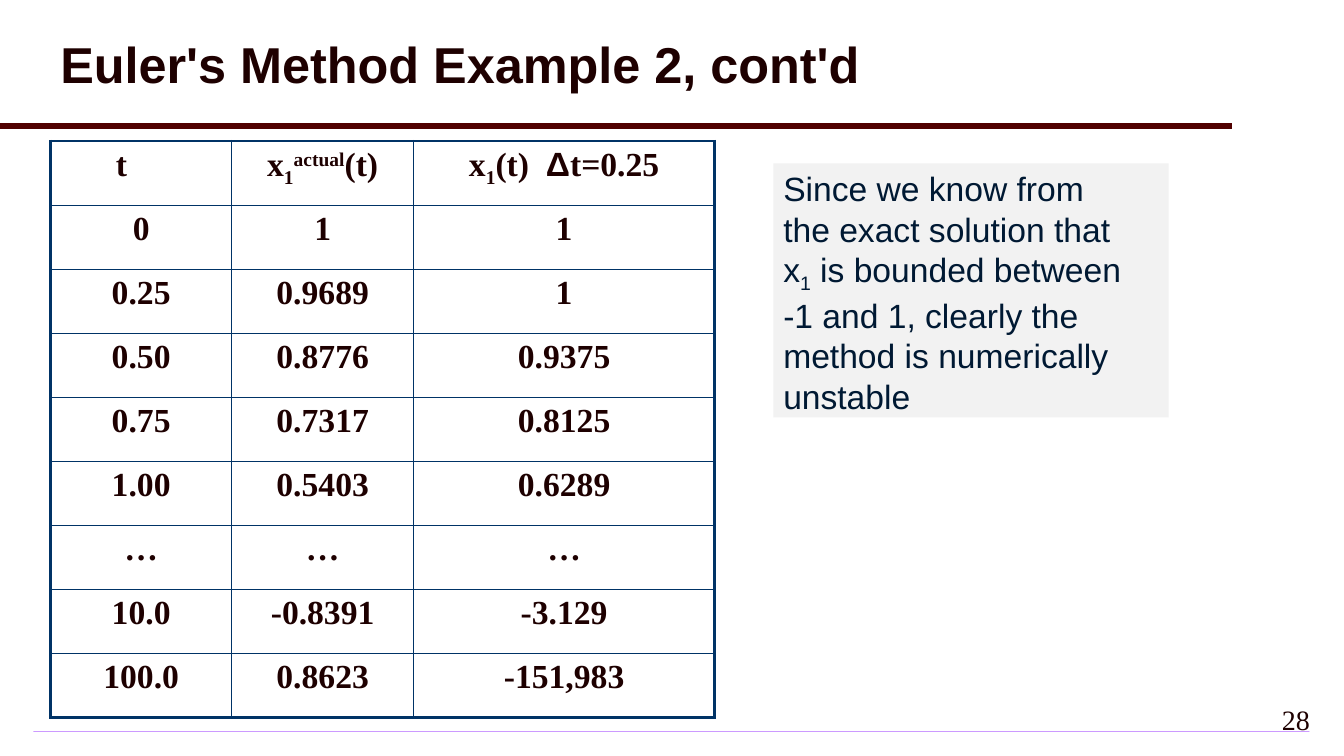
import dataclasses
import typing

import lxml.etree
import pptx
import pptx.dml.color
import pptx.enum.shapes
import pptx.enum.text
import pptx.oxml.ns
import pptx.util

Inches = pptx.util.Inches
Align = pptx.enum.text.PP_ALIGN
Anchor = pptx.enum.text.MSO_ANCHOR
Rect = pptx.enum.shapes.MSO_SHAPE.RECTANGLE
qn = pptx.oxml.ns.qn

SANS, SERIF = "Arial", "Times New Roman"
DARK, NAVY, INK = "1E0000", "003366", "001933"
THICK, THIN = 2.25, 1


@dataclasses.dataclass(frozen=True)
class Bit:
    text: str
    base: int = 0
    face: str = ""


@dataclasses.dataclass(frozen=True)
class Box:
    left: float
    top: float
    width: float
    height: float

    def area(self) -> tuple:
        return tuple(Inches(n) for n in dataclasses.astuple(self))


Text = typing.Union[str, list[Bit]]

HEAD: list[Text] = [
    "t\t",
    [Bit("x"), Bit("1", -25), Bit("actual", 30), Bit("(t)")],
    [Bit("x"), Bit("1", -25), Bit("(t)  "), Bit("Δ", face=SANS), Bit("t=0.25")],
]
ROWS: list[list[Text]] = [
    HEAD,
    ["0", "1", "1"],
    ["0.25", "0.9689", "1"],
    ["0.50", "0.8776", "0.9375"],
    ["0.75", "0.7317", "0.8125"],
    ["1.00", "0.5403", "0.6289"],
    ["…", "…", "…"],
    ["10.0", "-0.8391", "-3.129"],
    ["100.0", "0.8623", "-151,983"],
]
WIDTHS = [1.8, 1.8, 2.99]
GRID = Box(0.5, 1.4, sum(WIDTHS), 5.72)
NOTE = [
    Bit("Since we know from\nthe exact solution that\nx"),
    Bit("1", -25),
    Bit(" is bounded between\n-1 and 1, clearly the\nmethod is numerically\nunstable"),
]


def color(code: str) -> pptx.dml.color.RGBColor:
    return pptx.dml.color.RGBColor.from_string(code)


def write(frame, text: Text, *, size: float, face: str, ink: str = DARK,
          bold: bool = False, align=Align.LEFT, lead: float = 1.0) -> None:
    frame.word_wrap = True
    para = frame.paragraphs[0]
    para.alignment = align
    para.line_spacing = lead
    for bit in [Bit(text)] if isinstance(text, str) else text:
        for i, line in enumerate(bit.text.split("\n")):
            if i:
                para.add_line_break()
            run = para.add_run()
            run.text = line
            run.font.size = pptx.util.Pt(size)
            run.font.name = bit.face or face
            run.font.bold = bold
            run.font.color.rgb = color(ink)
            if bit.base:
                run._r.get_or_add_rPr().set("baseline", str(bit.base * 1000))


def label(slide, box: Box, text: Text, anchor=Anchor.TOP, **form) -> None:
    frame = slide.shapes.add_textbox(*box.area()).text_frame
    frame.vertical_anchor = anchor
    write(frame, text, **form)


def panel(slide, box: Box):
    shape = slide.shapes.add_shape(Rect, *box.area())
    shape.shadow.inherit = False
    shape.line.fill.background()
    return shape


def footer(slide) -> None:
    shape = panel(slide, Box(0.33, 7.25, 12.66, 0.01))
    shape.fill.gradient()
    for stop, code in zip(shape.fill.gradient_stops, ["CC99FF", "F3EBFF"]):
        stop.color.rgb = color(code)
    lin = shape._element.spPr.find(".//" + qn("a:lin"))
    glow = lxml.etree.Element(qn("a:path"), {"path": "shape"})
    mid = {side: "50000" for side in "ltrb"}
    lxml.etree.SubElement(glow, qn("a:fillToRect"), mid)
    lin.getparent().replace(lin, glow)


def rule(slide) -> None:
    line = slide.shapes.add_connector(
        pptx.enum.shapes.MSO_CONNECTOR.STRAIGHT,
        Inches(0), Inches(1.25), Inches(12.22), Inches(1.25))
    line.line.color.rgb = color("500000")
    line.line.width = pptx.util.Pt(4)
    lxml.etree.SubElement(line._element.spPr, qn("a:effectLst"))


def border(cell, edges: dict[str, bool]) -> None:
    props = cell._tc.get_or_add_tcPr()
    for side, outer in edges.items():
        width = pptx.util.Pt(THICK if outer else THIN)
        edge = lxml.etree.SubElement(props, qn("a:ln" + side), {"w": str(width)})
        fill = lxml.etree.SubElement(edge, qn("a:solidFill"))
        lxml.etree.SubElement(fill, qn("a:srgbClr"), {"val": NAVY})


def table(slide) -> None:
    grid = slide.shapes.add_table(len(ROWS), len(WIDTHS), *GRID.area()).table
    grid.first_row = grid.horz_banding = False
    for col, width in zip(grid.columns, WIDTHS):
        col.width = Inches(width)
    for r, row in enumerate(ROWS):
        grid.rows[r].height = Inches(GRID.height / len(ROWS))
        for c, text in enumerate(row):
            cell = grid.cell(r, c)
            border(cell, {"L": c == 0, "R": c == len(WIDTHS) - 1,
                          "T": r == 0, "B": r == len(ROWS) - 1})
            cell.fill.background()
            write(cell.text_frame, text, size=24, face=SERIF, bold=True,
                  align=Align.CENTER)


def main() -> None:
    deck = pptx.Presentation()
    deck.slide_width, deck.slide_height = Inches(13.33), Inches(7.5)
    slide = deck.slides.add_slide(deck.slide_layouts[6])
    footer(slide)
    rule(slide)
    label(slide, Box(0.5, 0.08, 12.2, 1.17), "Euler's Method Example 2, cont'd",
          Anchor.MIDDLE, size=36, face=SANS, bold=True, lead=0.9)
    table(slide)
    note = panel(slide, Box(7.67, 1.62, 3.92, 2.52))
    note.fill.solid()
    note.fill.fore_color.rgb = color("F2F2F2")
    note.text_frame.vertical_anchor = Anchor.TOP
    write(note.text_frame, NOTE, size=24, face=SANS, ink=INK)
    label(slide, Box(12.42, 6.92, 0.67, 0.5), "28", size=20, face=SERIF,
          align=Align.RIGHT)
    deck.save("out.pptx")


if __name__ == "__main__":
    main()
